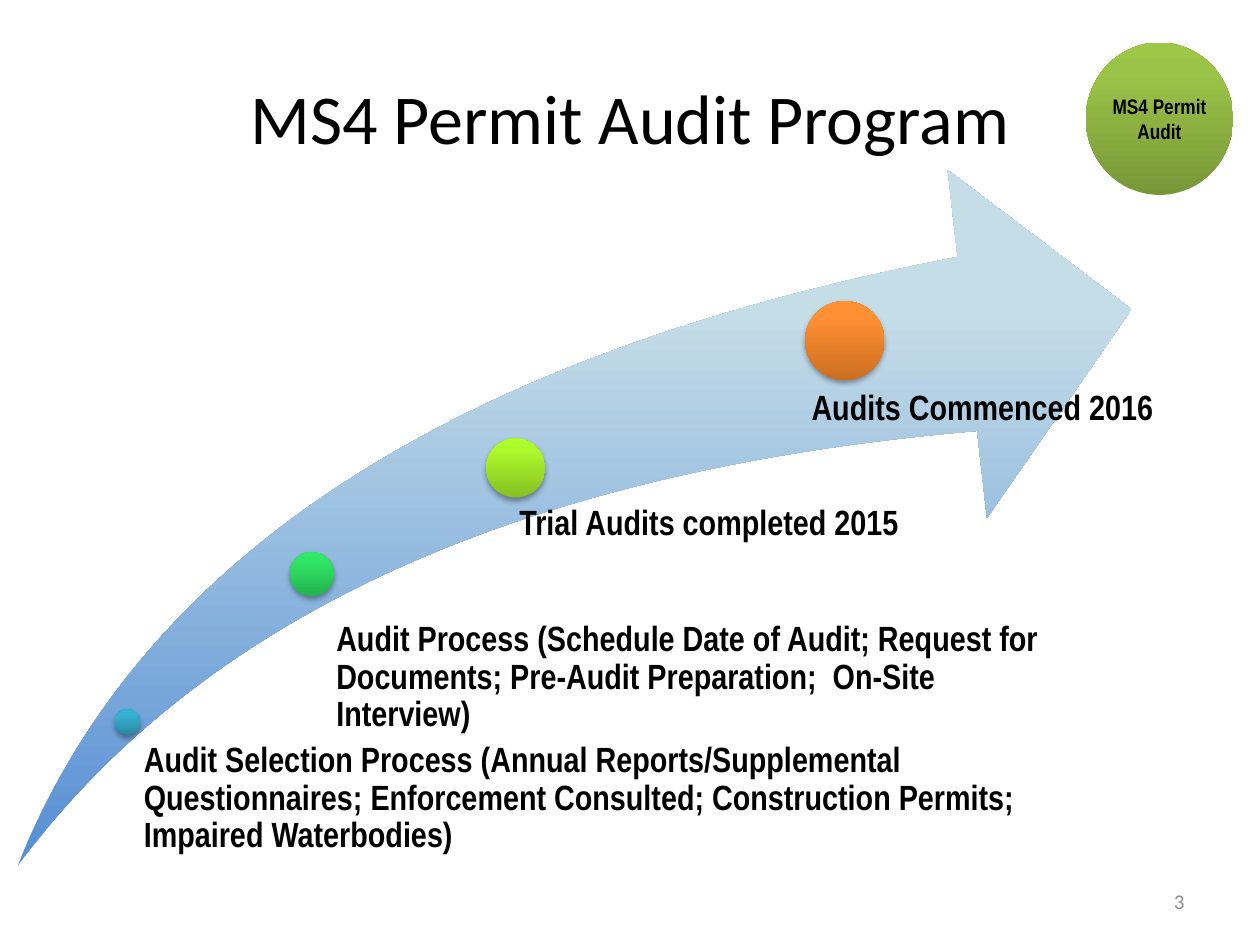
from copy import deepcopy

from lxml import etree
from pptx import Presentation, util as u
from pptx.dml import color
from pptx.enum import shapes, text
from pptx.oxml import ns

COLORS = {
    "ink": "000000",
    "page_number": "8C8C8C",
    "arrow": ("558ED5", "C5DDE7", "C6DEE9"),
    "teal": ("2A88A2", "37B1D2", "34B4D6"),
    "green": ("25B14E", "30E666", "2CEB65"),
    "lime": ("85C022", "ADF92C", "AEFF28"),
    "orange": ("CC6E20", "FF9034", "FF9136"),
    "badge": ("779737", "9BC348", "9DC746"),
}
GRADIENT_POSITIONS = (0, 0.8, 1)

# Dot colour, dot (left, top, diameter), label, label box, left inset; all in cm
MILESTONES = [
    ("teal", (2.31, 14.3, 0.51),
     "Audit Selection Process (Annual Reports/Supplemental Questionnaires; "
     "Enforcement Consulted; Construction Permits; Impaired Waterbodies)",
     (2.62, 14.96, 19.05, 2.54), 0.28),
    ("green", (5.84, 11.13, 0.89),
     "Audit Process (Schedule Date of Audit; Request for Documents; "
     "Pre-Audit Preparation;  On-Site Interview)",
     (6.3, 12.52, 15.39, 1.73), 0.48),
    ("lime", (9.8, 8.84, 1.19), "Trial Audits completed 2015",
     (9.83, 10.19, 9.47, 2.59), 0.64),
    ("orange", (16.23, 6.07, 1.6), "Audits Commenced 2016",
     (15.52, 7.87, 7.95, 3.28), 0.84),
]


def box_cm(box):
    """Turn a box of centimetre numbers into lengths."""
    return [u.Cm(value) for value in box]


def write(holder, words, size, font="Calibri", ink="ink", bold=False, align="LEFT",
          anchor="MIDDLE", insets=(0.25, 0.13, 0.25, 0.13), spacing=1.0):
    """Write one formatted paragraph into a shape or text box."""
    frame = holder.text_frame
    frame.word_wrap = True
    frame.vertical_anchor = getattr(text.MSO_ANCHOR, anchor)
    (frame.margin_left, frame.margin_top,
     frame.margin_right, frame.margin_bottom) = box_cm(insets)
    paragraph = frame.paragraphs[0]
    paragraph.alignment = getattr(text.PP_ALIGN, align)
    paragraph.line_spacing = spacing
    run = paragraph.add_run()
    run.text = words
    run.font.name = font
    run.font.size = u.Pt(size)
    run.font.bold = bold
    run.font.color.rgb = color.RGBColor.from_string(COLORS[ink])


def add_label(slide, box, words, size, **style):
    """Add a text box holding one formatted paragraph."""
    write(slide.shapes.add_textbox(*box_cm(box)), words, size, **style)


def add_gradient_shape(slide, kind, box, tone):
    """Add an unlined shape whose gradient runs from bottom to top."""
    shape = slide.shapes.add_shape(kind, *box_cm(box))
    shape.shadow.inherit = False
    shape.line.fill.background()
    shape.fill.gradient()
    shape.fill.gradient_angle = 90
    stop_list = shape._element.spPr.find(".//" + ns.qn("a:gsLst"))
    stop_list.append(deepcopy(stop_list[-1]))
    for stop, position, shade in zip(shape.fill.gradient_stops, GRADIENT_POSITIONS, COLORS[tone]):
        stop.position = position
        stop.color.rgb = color.RGBColor.from_string(shade)
    return shape


def drop_shadow(shape):
    """Cast a soft black shadow straight down."""
    effects = shape._element.spPr.find(ns.qn("a:effectLst"))
    shadow = etree.SubElement(effects, ns.qn("a:outerShdw"), blurRad=str(u.Pt(3.1)),
                              dist=str(u.Pt(1.8)), dir="5400000", rotWithShape="0")
    black = etree.SubElement(shadow, ns.qn("a:srgbClr"), val=COLORS["ink"])
    etree.SubElement(black, ns.qn("a:alpha"), val="35000")


def add_milestone(slide, tone, dot_place, words, label_box, indent):
    """Add a shadowed dot and the label below it."""
    left, top, diameter = dot_place
    dot = add_gradient_shape(slide, shapes.MSO_SHAPE.OVAL,
                             (left, top, diameter, diameter), tone)
    drop_shadow(dot)
    add_label(slide, label_box, words, 20, font="Arial Narrow", bold=True,
              anchor="TOP", insets=(indent, 0, 0, 0), spacing=0.9)


def main():
    """Build the audit program slide."""
    deck = Presentation()
    deck.slide_width, deck.slide_height = u.Cm(25.4), u.Cm(19.05)
    slide = deck.slides.add_slide(deck.slide_layouts[6])

    add_label(slide, (1.27, 0.76, 22.86, 3.18), "MS4 Permit Audit Program", 40, align="CENTER")
    arrow = add_gradient_shape(slide, shapes.MSO_SHAPE.SWOOSH_ARROW,
                               (0.36, 3.43, 22.45, 14.02), "arrow")
    arrow.adjustments[0] = arrow.adjustments[1] = 0.25
    for milestone in MILESTONES:
        add_milestone(slide, *milestone)

    badge = add_gradient_shape(slide, shapes.MSO_SHAPE.OVAL, (21.89, 0.86, 2.97, 3.07), "badge")
    write(badge, "MS4 Permit Audit", 12, font="Arial Narrow", bold=True,
          align="CENTER", insets=(0.03,) * 4)
    add_label(slide, (18.21, 17.65, 5.92, 1.02), "3", 12, ink="page_number", align="RIGHT")
    deck.save("out.pptx")


if __name__ == "__main__":
    main()
